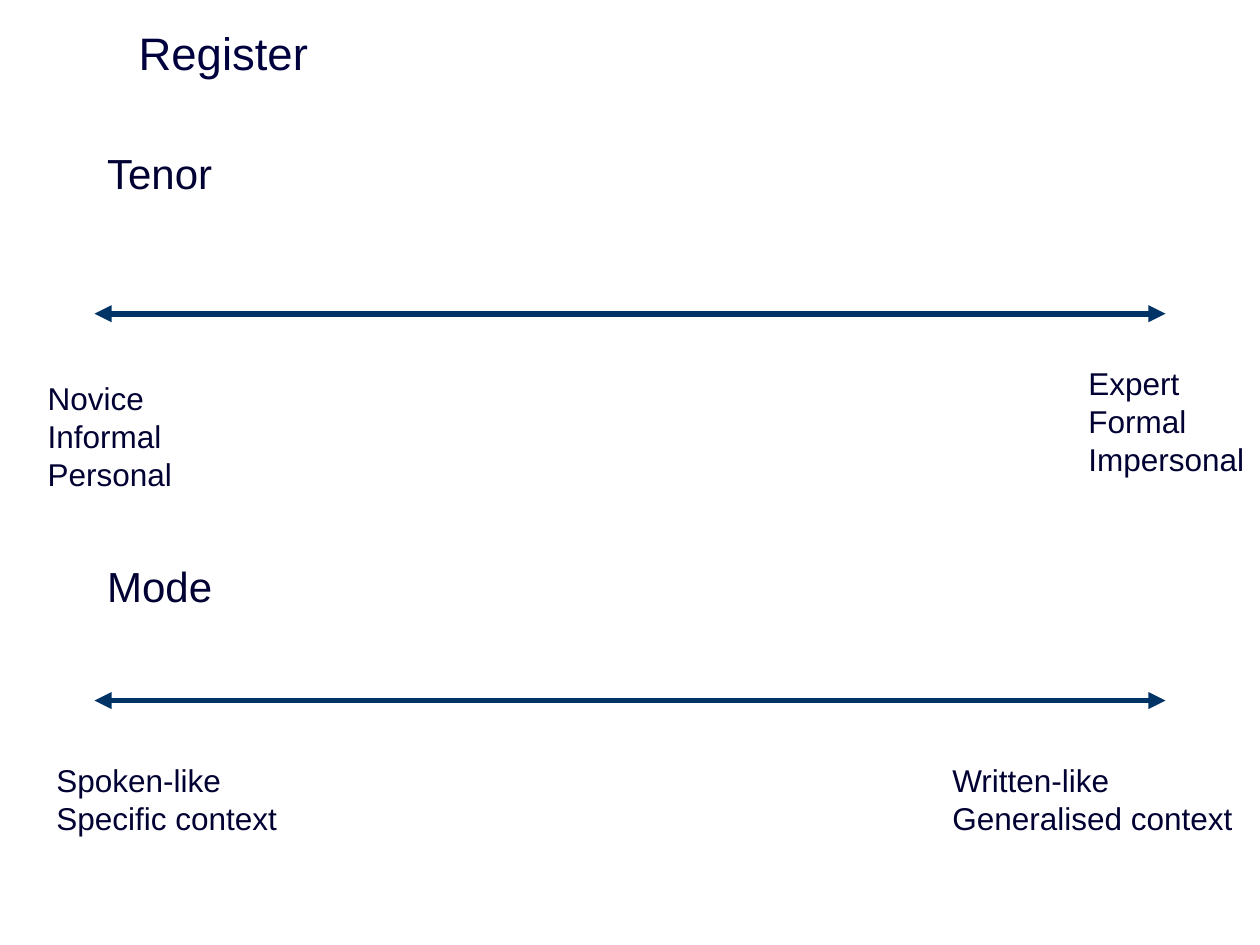
"""Build the Register slide: the tenor and mode scales."""
from pptx import Presentation, util as u
from pptx.dml.color import RGBColor
from pptx.enum import shapes, text
from pptx.oxml.ns import qn
from lxml import etree

TITLE = RGBColor(0x00, 0x00, 0x3E)
INK = RGBColor(0x00, 0x00, 0x32)
NAVY = RGBColor(0x00, 0x33, 0x66)
CELL = u.Inches(0.1)
COLS, ROWS = 100, 75


def write(frame, lines, size=18, color=INK, font="Arial", gap=0, plain=False):
    frame.word_wrap = True
    for i, line in enumerate(lines):
        para = frame.paragraphs[0] if i == 0 else frame.add_paragraph()
        para.alignment = text.PP_ALIGN.LEFT
        para.space_before = u.Pt(gap if i else 0)
        if plain:
            props = para._p.get_or_add_pPr()
            props.set("marL", str(u.Inches(0.38)))
            props.set("indent", str(-u.Inches(0.38)))
            etree.SubElement(props, qn("a:buNone"))
        run = para.add_run()
        run.text = line
        run.font.size = u.Pt(size)
        run.font.name = font
        run.font.color.rgb = color


class Deck:
    def __init__(self):
        self.prs = Presentation()
        self.prs.slide_width = COLS * CELL
        self.prs.slide_height = ROWS * CELL
        self.slide = self.prs.slides.add_slide(self.prs.slide_layouts[1])

    def grid(self, *cells):
        return [round(c * CELL) for c in cells]

    def place(self, shape, cells, anchor):
        shape.left, shape.top, shape.width, shape.height = self.grid(*cells)
        shape.text_frame.auto_size = text.MSO_AUTO_SIZE.NONE
        shape.text_frame.vertical_anchor = anchor
        return shape.text_frame

    def title(self, line, *cells):
        frame = self.place(self.slide.shapes.title, cells, text.MSO_ANCHOR.MIDDLE)
        write(frame, [line], size=26, color=TITLE)

    def body(self, lines, *cells, gap):
        frame = self.place(self.slide.placeholders[1], cells, text.MSO_ANCHOR.TOP)
        frame.margin_top = u.Inches(0.1)
        write(frame, lines, size=24, gap=gap, plain=True)

    def label(self, lines, *cells):
        box = self.slide.shapes.add_textbox(*self.grid(*cells))
        write(box.text_frame, lines)
        box.text_frame.auto_size = text.MSO_AUTO_SIZE.SHAPE_TO_FIT_TEXT

    def scale(self, row, left=7.5):
        ends = self.grid(left, row, COLS - left, row)
        line = self.slide.shapes.add_connector(shapes.MSO_CONNECTOR.STRAIGHT, *ends)
        line.line.color.rgb = NAVY
        line.line.width = u.Pt(3.25)
        stroke = line.line._get_or_add_ln()
        for end in ("a:headEnd", "a:tailEnd"):
            etree.SubElement(stroke, qn(end), type="triangle")
        etree.SubElement(line._element.spPr, qn("a:effectLst"))


def main():
    deck = Deck()
    deck.title("Register", 10, 1.6, 90, 5.1)
    deck.body(["Tenor", "Mode"], 7.5, 10.7, 88.3, 49.5, gap=207.3)
    deck.scale(24.9)
    deck.label(["Novice", "Informal", "Personal"], 2.8, 29.6, 14.2, 10.1)
    deck.label(["Expert", "Formal", "Impersonal"], 85.4, 28.4, 16.5, 10.1)
    deck.label(["Spoken-like", "Specific context"], 3.5, 59.9, 22, 7.1)
    deck.label(["Written-like", "Generalised context"], 74.6, 59.9, 25.9, 7.1)
    deck.scale(55.6)
    deck.prs.save("out.pptx")


if __name__ == "__main__":
    main()
